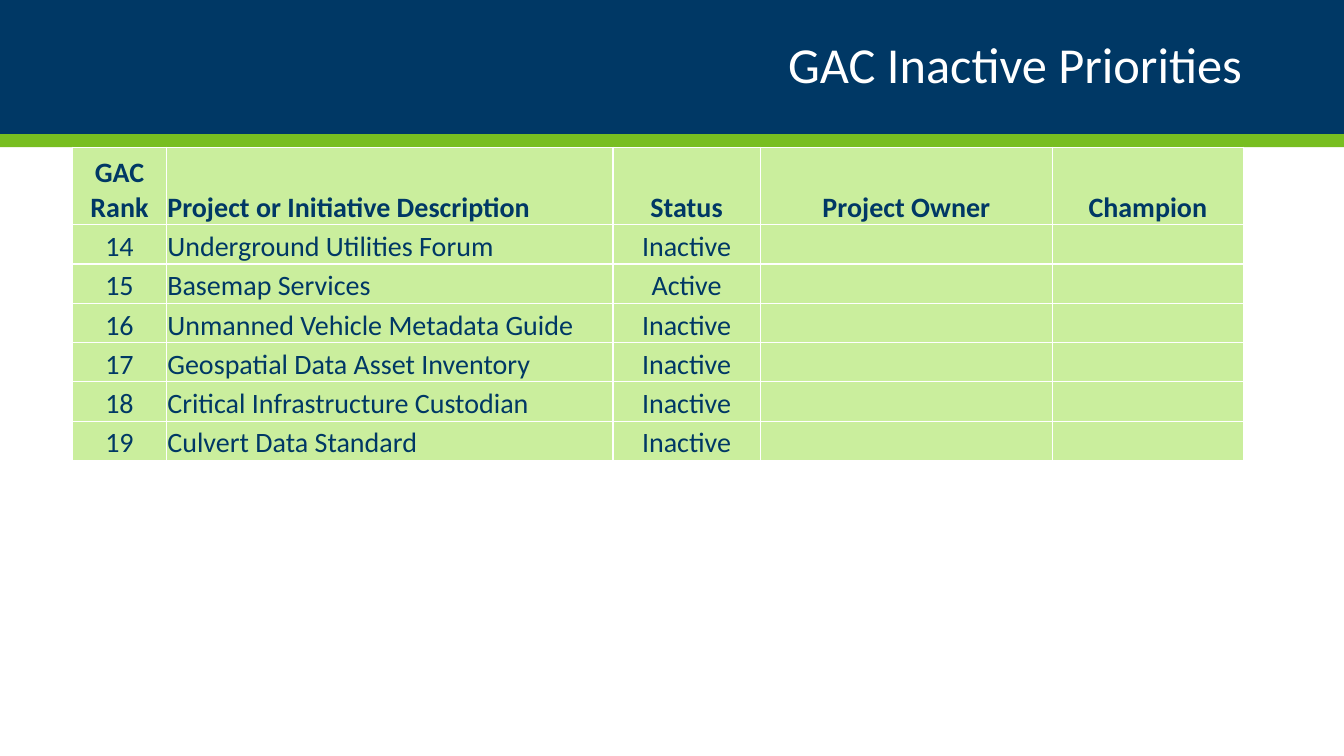
"""Build the slide that lists the inactive GAC priorities in a table."""
import pptx
import pptx.util
import pptx.dml.color
import pptx.enum.shapes
import pptx.enum.text
import pptx.oxml
import pptx.oxml.ns

Inches = pptx.util.Inches
Align = pptx.enum.text.PP_ALIGN
Anchor = pptx.enum.text.MSO_ANCHOR
NAVY, GREEN, LIME, WHITE = "003865", "78BE21", "CAEE9D", "FFFFFF"


def paint(color, code):
    color.rgb = pptx.dml.color.RGBColor.from_string(code)


def write(para, text, code, style):
    run = para.add_run()
    run.text = text
    for name, value in style.items():
        setattr(run.font, name, value)
    paint(run.font.color, code)


deck = pptx.Presentation()
deck.slide_width, deck.slide_height = Inches(13.33), Inches(7.5)
slide = deck.slides.add_slide(deck.slide_layouts[6])

for top, height, code in [(0, 1.33, NAVY), (1.33, 0.13, GREEN)]:
    band = slide.shapes.add_shape(
        pptx.enum.shapes.MSO_SHAPE.RECTANGLE,
        0, Inches(top), deck.slide_width, Inches(height))
    band.shadow.inherit = False
    band.fill.solid()
    paint(band.fill.fore_color, code)
    band.line.fill.background()

title = slide.shapes.add_textbox(Inches(0.92), Inches(0.17), Inches(11.5), Inches(1))
frame = title.text_frame
frame.word_wrap = True
frame.vertical_anchor = Anchor.MIDDLE
para = frame.paragraphs[0]
para.alignment = Align.RIGHT
para.line_spacing = 0.9
write(para, "GAC Inactive Priorities", WHITE,
      {"name": "Calibri", "size": pptx.util.Pt(36)})

rows = [
    ("GAC Rank", "Project or Initiative Description", "Status", "Project Owner", "Champion"),
    ("14", "Underground Utilities Forum", "Inactive", "", ""),
    ("15", "Basemap Services", "Active", "", ""),
    ("16", "Unmanned Vehicle Metadata Guide", "Inactive", "", ""),
    ("17", "Geospatial Data Asset Inventory", "Inactive", "", ""),
    ("18", "Critical Infrastructure Custodian", "Inactive", "", ""),
    ("19", "Culvert Data Standard", "Inactive", "", ""),
]
widths = [0.93, 4.43, 1.46, 2.9, 1.89]
heights = [0.77] + [0.39] * (len(rows) - 1)
table = slide.shapes.add_table(
    len(rows), len(widths), Inches(0.72), Inches(1.46),
    Inches(sum(widths)), Inches(sum(heights))).table
for col, width in zip(table.columns, widths):
    col.width = Inches(width)
for row, height in zip(table.rows, heights):
    row.height = Inches(height)

layout = {
    "margin_left": Inches(0.01), "margin_right": Inches(0.01),
    "margin_top": Inches(0.01), "margin_bottom": 0,
    "vertical_anchor": Anchor.BOTTOM,
}
for r, texts in enumerate(rows):
    style = {"name": "Calibri", "size": pptx.util.Pt(20), "bold": r == 0}
    for c, text in enumerate(texts):
        cell = table.cell(r, c)
        for name, value in layout.items():
            setattr(cell, name, value)
        props = cell._tc.get_or_add_tcPr()
        for side in "LRTB":
            props.append(pptx.oxml.parse_xml(
                f'<a:ln{side} {pptx.oxml.ns.nsdecls("a")} w="12700"><a:solidFill>'
                f'<a:srgbClr val="{WHITE}"/></a:solidFill></a:ln{side}>'))
        cell.fill.solid()
        paint(cell.fill.fore_color, LIME)
        if text:
            para = cell.text_frame.paragraphs[0]
            para.alignment = Align.LEFT if c == 1 else Align.CENTER
            write(para, text, NAVY, style)

deck.save("out.pptx")
